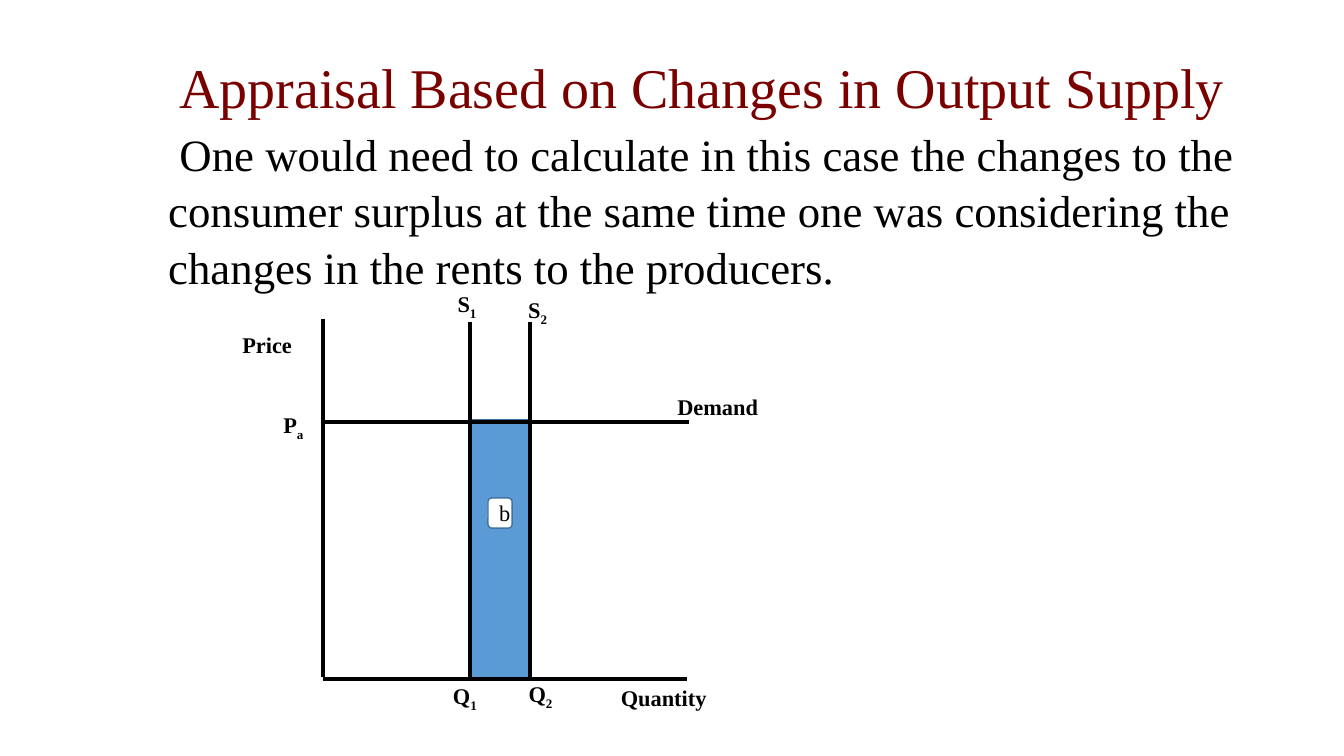
from lxml.etree import SubElement
from pptx import Presentation
from pptx.dml.color import RGBColor
from pptx.enum.shapes import MSO_CONNECTOR, MSO_SHAPE
from pptx.enum.text import MSO_ANCHOR, PP_ALIGN
from pptx.oxml.ns import qn
from pptx.util import Inches, Pt

FONT = "Times New Roman"
BLACK = RGBColor(0x00, 0x00, 0x00)
WHITE = RGBColor(0xFF, 0xFF, 0xFF)
MAROON = RGBColor(0x7A, 0x00, 0x00)
BLUE = RGBColor(0x5B, 0x9B, 0xD5)
DARK_BLUE = RGBColor(0x43, 0x73, 0x9E)

AXIS_X, AXIS_Y = 3.2, 6.74
PRICE_Y = 4.19
SUPPLY_1_X, SUPPLY_2_X = 4.66, 5.26
SUPPLY_TOP, SUPPLY_BOTTOM = 3.19, 6.72


def add_span(para, text, size, color=BLACK, bold=False, subscript=False):
    span = para.add_run()
    span.text = text
    span.font.name = FONT
    span.font.size = Pt(size)
    span.font.bold = bold
    span.font.color.rgb = color
    if subscript:
        span.font._element.set("baseline", "-25000")


def add_title(slide, text):
    title = slide.shapes.title
    title.left, title.top = Inches(1.57), Inches(0.42)
    title.width, title.height = Inches(10.78), Inches(0.75)
    title.text_frame.vertical_anchor = MSO_ANCHOR.TOP
    para = title.text_frame.paragraphs[0]
    para.alignment = PP_ALIGN.CENTER
    para.line_spacing = 1.07
    add_span(para, text, 40, MAROON)


def add_text_box(slide, left, top, width, height):
    """Add a wrapping text box and return its first paragraph."""
    box = slide.shapes.add_textbox(Inches(left), Inches(top), Inches(width), Inches(height))
    box.text_frame.word_wrap = True
    return box.text_frame.paragraphs[0]


def add_label(slide, text, subscript, left, top, width, align=PP_ALIGN.LEFT):
    para = add_text_box(slide, left, top, width, 0.5)
    para.alignment = align
    add_span(para, text, 16, bold=True)
    if subscript:
        add_span(para, subscript, 16, bold=True, subscript=True)


def add_area(slide, preset, left, top, width, height, fill):
    area = slide.shapes.add_shape(preset, Inches(left), Inches(top), Inches(width), Inches(height))
    area.shadow.inherit = False
    area.fill.solid()
    area.fill.fore_color.rgb = fill
    area.line.color.rgb = DARK_BLUE
    area.line.width = Pt(1)
    return area


def add_line(slide, x1, y1, x2, y2):
    line = slide.shapes.add_connector(
        MSO_CONNECTOR.STRAIGHT, Inches(x1), Inches(y1), Inches(x2), Inches(y2))
    line.line.color.rgb = BLACK
    line.line.width = Pt(3)
    SubElement(line._element.spPr, qn("a:effectLst"))


def main():
    deck = Presentation()
    deck.slide_width, deck.slide_height = Inches(13.33), Inches(7.5)
    slide = deck.slides.add_slide(deck.slide_layouts[5])

    add_title(slide, "Appraisal Based on Changes in Output Supply")
    body = add_text_box(slide, 1.57, 1.18, 10.78, 1.71)
    body.line_spacing = 1.05
    add_span(body, "\N{NO-BREAK SPACE}One would need to calculate in this case the changes to the "
                   "consumer surplus at the same time one was considering the "
                   "changes in the rents to the producers.", 32)

    add_area(slide, MSO_SHAPE.RECTANGLE, SUPPLY_1_X, 4.16,
             SUPPLY_2_X - SUPPLY_1_X, 2.57, BLUE)

    for text, subscript, left, top, width, align in (
        ("Price", "", 2.25, 3.24, 0.8, PP_ALIGN.CENTER),
        ("Quantity", "", 6.06, 6.74, 3.64, PP_ALIGN.LEFT),
        ("Demand", "", 6.62, 3.85, 1.23, PP_ALIGN.LEFT),
        ("P", "a", 2.44, 4.03, 0.94, PP_ALIGN.CENTER),
        ("Q", "1", 4.14, 6.72, 0.94, PP_ALIGN.CENTER),
        ("Q", "2", 4.89, 6.7, 0.94, PP_ALIGN.CENTER),
        ("S", "1", 4.44, 2.83, 0.43, PP_ALIGN.LEFT),
        ("S", "2", 5.14, 2.89, 0.43, PP_ALIGN.LEFT),
    ):
        add_label(slide, text, subscript, left, top, width, align)

    area_name = add_area(slide, MSO_SHAPE.ROUNDED_RECTANGLE, 4.84, 4.94, 0.24, 0.3, WHITE)
    area_name.text_frame.vertical_anchor = MSO_ANCHOR.MIDDLE
    para = area_name.text_frame.paragraphs[0]
    para.alignment = PP_ALIGN.CENTER
    add_span(para, "b", 16)

    add_line(slide, AXIS_X, AXIS_Y, 6.81, AXIS_Y)
    add_line(slide, AXIS_X, 3.16, AXIS_X, SUPPLY_BOTTOM)
    add_line(slide, AXIS_X, PRICE_Y, 6.83, PRICE_Y)
    for supply_x in (SUPPLY_1_X, SUPPLY_2_X):
        add_line(slide, supply_x, SUPPLY_TOP, supply_x, SUPPLY_BOTTOM)

    deck.save("out.pptx")


if __name__ == "__main__":
    main()
